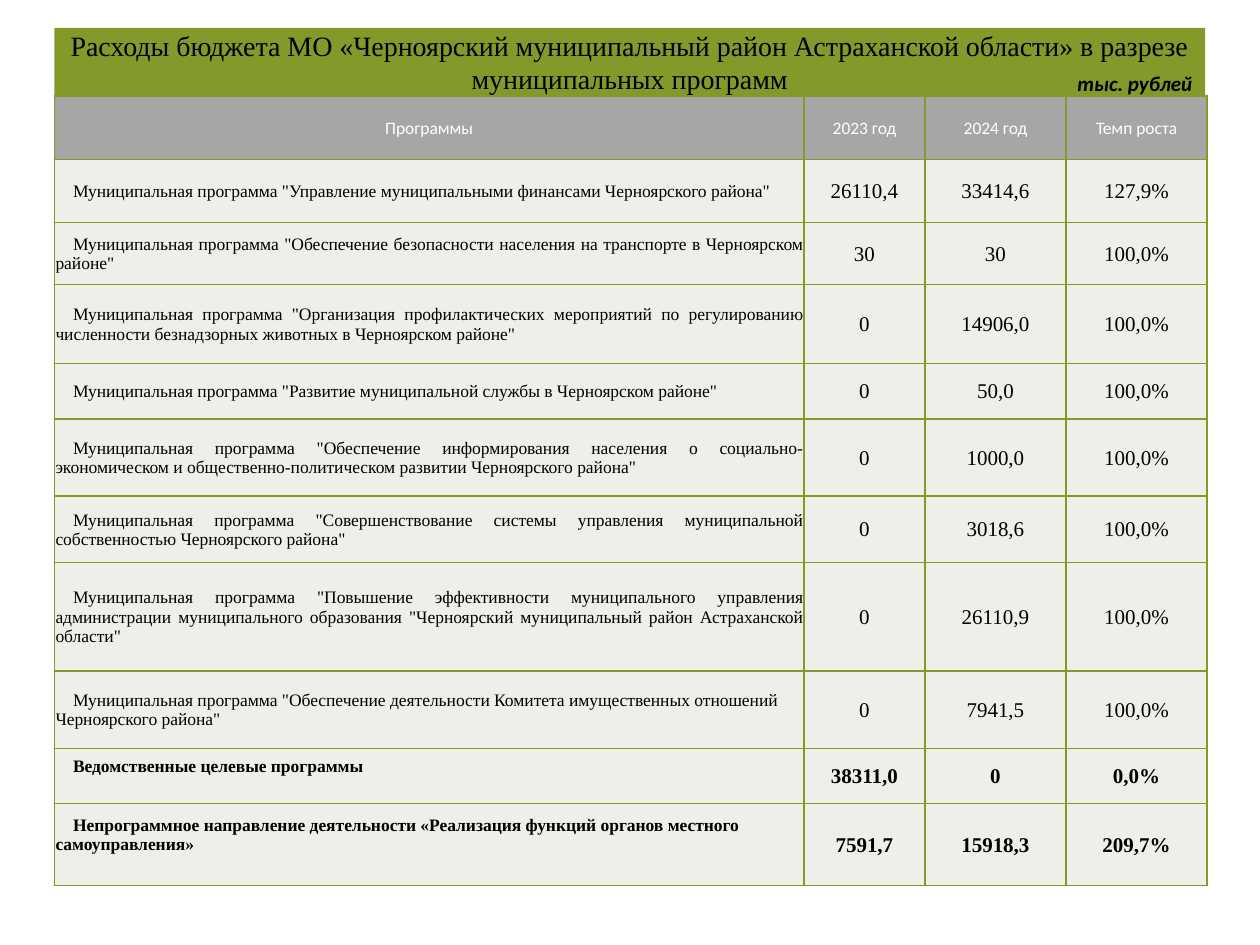
from lxml import etree
from pptx import Presentation
from pptx.dml.color import RGBColor
from pptx.enum.shapes import MSO_SHAPE
from pptx.enum.text import MSO_ANCHOR, PP_ALIGN
from pptx.oxml.ns import qn
from pptx.util import Pt

RECT = MSO_SHAPE.RECTANGLE
MIDDLE = MSO_ANCHOR.MIDDLE
LEFT, CENTER, JUSTIFY = PP_ALIGN.LEFT, PP_ALIGN.CENTER, PP_ALIGN.JUSTIFY
OLIVE = RGBColor(0x83, 0x99, 0x2A)
GRAY = RGBColor(0xA6, 0xA6, 0xA6)
PALE = RGBColor(0xED, 0xEF, 0xE8)
WHITE = RGBColor(0xFF, 0xFF, 0xFF)
BLACK = RGBColor(0, 0, 0)
SERIF, SANS = "Times New Roman", "Calibri"

COLUMNS = [428.4, 69.12, 80.64, 80.64]
ROWS = [
    (36.4, JUSTIFY, ["Программы", "2023 год", "2024 год", "Темп роста"]),
    (36, JUSTIFY, ['Муниципальная программа "Управление муниципальными финансами Черноярского района"',
                   "26110,4", "33414,6", "127,9%"]),
    (35.4, JUSTIFY, ['Муниципальная программа "Обеспечение безопасности населения на транспорте в Черноярском районе"',
                     "30", "30", "100,0%"]),
    (45.2, JUSTIFY, ['Муниципальная программа "Организация профилактических мероприятий по регулированию численности безнадзорных животных в Черноярском районе"',
                     "0", "14906,0", "100,0%"]),
    (31.7, JUSTIFY, ['Муниципальная программа "Развитие муниципальной службы в Черноярском районе"',
                     "0", "50,0", "100,0%"]),
    (44, JUSTIFY, ['Муниципальная программа "Обеспечение информирования населения о социально-экономическом и общественно-политическом развитии Черноярского района"',
                   "0", "1000,0", "100,0%"]),
    (38, JUSTIFY, ['Муниципальная программа "Совершенствование системы управления муниципальной собственностью Черноярского района"',
                   "0", "3018,6", "100,0%"]),
    (62, JUSTIFY, ['Муниципальная программа "Повышение эффективности муниципального управления администрации муниципального образования "Черноярский муниципальный район Астраханской области"',
                   "0", "26110,9", "100,0%"]),
    (44.2, LEFT, ['Муниципальная программа "Обеспечение деятельности Комитета имущественных отношений Черноярского района"',
                  "0", "7941,5", "100,0%"]),
    (31.5, LEFT, ["Ведомственные целевые программы", "38311,0", "0", "0,0%"]),
    (46.8, LEFT, ["Непрограммное направление деятельности «Реализация функций органов местного самоуправления»",
                  "7591,7", "15918,3", "209,7%"]),
]
FIRST_BOLD_ROW = 9


def write(tf, text, align, color, **fmt):
    p = tf.paragraphs[0]
    p.alignment = align
    r = p.add_run()
    r.text = text
    r.font.color.rgb = color
    for name, value in fmt.items():
        setattr(r.font, name, value)
    return p


def add_borders(cell, color, width):
    tcPr = cell._tc.get_or_add_tcPr()
    for i, side in enumerate(("lnL", "lnR", "lnT", "lnB")):
        ln = etree.Element(qn(f"a:{side}"), w=str(width))
        fill = etree.SubElement(ln, qn("a:solidFill"))
        etree.SubElement(fill, qn("a:srgbClr"), val=str(color))
        tcPr.insert(i, ln)


prs = Presentation()
prs.slide_width, prs.slide_height = Pt(720), Pt(540)
s = prs.slides.add_slide(prs.slide_layouts[6])

title = s.shapes.add_shape(RECT, Pt(31), Pt(16), Pt(657.6), Pt(38.8))
title.shadow.inherit = False
title.fill.solid()
title.fill.fore_color.rgb = OLIVE
title.line.fill.background()
title.text_frame.vertical_anchor = MIDDLE
write(title.text_frame,
      "Расходы бюджета МО «Черноярский муниципальный район Астраханской области» в разрезе муниципальных программ",
      CENTER, BLACK, name=SERIF, size=Pt(16))

unit = s.shapes.add_textbox(Pt(615.6), Pt(40.2), Pt(79.2), Pt(14.4))
write(unit.text_frame, "тыс. рублей", LEFT, BLACK,
      name=SANS, size=Pt(12), bold=True, italic=True)

for sp in (title, unit):
    tf = sp.text_frame
    tf.word_wrap = True
    tf.margin_left = tf.margin_right = tf.margin_top = tf.margin_bottom = 0

table = s.shapes.add_table(len(ROWS), len(COLUMNS), Pt(31), Pt(54.8),
                           Pt(sum(COLUMNS)), Pt(sum(row[0] for row in ROWS))).table
for column, width in zip(table.columns, COLUMNS):
    column.width = Pt(width)

for i, (height, align, texts) in enumerate(ROWS):
    table.rows[i].height = Pt(height)
    header, bold = i == 0, i >= FIRST_BOLD_ROW
    for j, text in enumerate(texts):
        cell = table.cell(i, j)
        label = j == 0 and not header
        cell.vertical_anchor = MIDDLE
        cell.margin_left = cell.margin_right = cell.margin_top = Pt(0.72)
        cell.margin_bottom = Pt(11) if label and bold else 0
        cell.fill.solid()
        cell.fill.fore_color.rgb = GRAY if header else PALE
        p = write(cell.text_frame, text, align if label else CENTER,
                  WHITE if header else BLACK,
                  name=SANS if header else SERIF,
                  size=Pt(10 if header or label else 12), bold=bold)
        if label:
            p._p.get_or_add_pPr().set("indent", str(Pt(10)))
        add_borders(cell, OLIVE, Pt(1))

prs.save("out.pptx")
